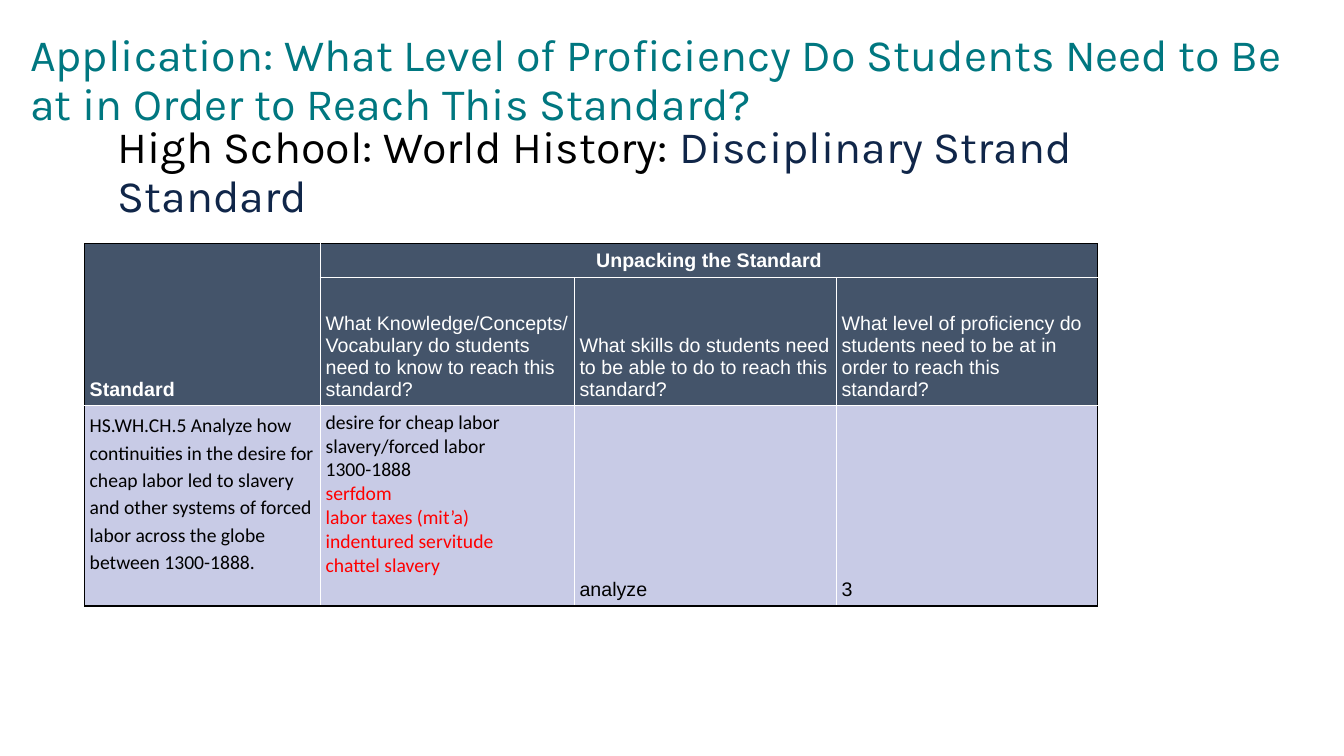
from pptx import Presentation
from pptx.dml.color import RGBColor
from pptx.enum.text import MSO_ANCHOR as Anchor, PP_ALIGN as Align
from pptx.oxml import parse_xml
from pptx.oxml.ns import nsdecls
from pptx.util import Pt

TEAL, NAVY, BLACK, WHITE, RED = "007780", "102649", "000000", "FFFFFF", "FF0000"
SLATE, LAVENDER = "44546A", "C8CBE6"
COL_WIDTHS = [168.5, 181.4, 187.2, 186.5]
ROW_HEIGHTS = [23.8, 91.4, 143.3]

QUESTIONS = [
    "What Knowledge/Concepts/ Vocabulary do students need to know to reach this standard?",
    "What skills do students need to be able to do to reach this standard?",
    "What level of proficiency do students need to be at in order to reach this standard?",
]
STANDARD = ("HS.WH.CH.5 Analyze how continuities in the desire for cheap labor led to "
            "slavery and other systems of forced labor across the globe between 1300-1888.")
GIVEN_CONCEPTS = ["desire for cheap labor", "slavery/forced labor", "1300-1888"]
ADDED_CONCEPTS = ["serfdom", "labor taxes (mit’a)", "indentured servitude", "chattel slavery"]


def rgb(color):
    return RGBColor.from_string(color)


def add_run(p, text, size, font, color, bold=False):
    r = p.add_run()
    r.text = text
    r.font.size, r.font.name, r.font.bold = Pt(size), font, bold
    r.font.color.rgb = rgb(color)


def add_heading(s, box, runs):
    """Place a heading whose runs are (text, color) pairs."""
    tf = s.shapes.add_textbox(*map(Pt, box)).text_frame
    tf.word_wrap = True
    p = tf.paragraphs[0]
    p.line_spacing = 0.9
    for text, color in runs:
        add_run(p, text, 32, "Karla", color)


def fill_cell(cell, lines, fill, font="Arial", bold=False, anchor=Anchor.BOTTOM,
              align=Align.LEFT, spacing=1.0):
    """Write (text, color) lines into a cell, one paragraph each."""
    cell.fill.solid()
    cell.fill.fore_color.rgb = rgb(fill)
    cell.vertical_anchor = anchor
    cell.margin_left = cell.margin_right = cell.margin_top = cell.margin_bottom = Pt(3.6)
    tf = cell.text_frame
    for i, (text, color) in enumerate(lines):
        p = tf.add_paragraph() if i else tf.paragraphs[0]
        p.alignment, p.line_spacing = align, spacing
        add_run(p, text, 14, font, color, bold)


def set_borders(table):
    """Black around the table, white between its cells."""
    last_row, last_col = len(table.rows), len(table.columns)
    for row in range(last_row):
        for col in range(last_col):
            cell = table.cell(row, col)
            if cell.is_spanned:
                continue
            outer = {
                "lnL": col == 0,
                "lnR": col + cell.span_width == last_col,
                "lnT": row == 0,
                "lnB": row + cell.span_height == last_row,
            }
            tc_pr = cell._tc.get_or_add_tcPr()
            for i, (side, on_edge) in enumerate(outer.items()):
                color = BLACK if on_edge else WHITE
                tc_pr.insert(i, parse_xml(
                    f'<a:{side} {nsdecls("a")} w="12700"><a:solidFill>'
                    f'<a:srgbClr val="{color}"/></a:solidFill></a:{side}>'))


def add_standard_table(s, left, top):
    table = s.shapes.add_table(
        len(ROW_HEIGHTS), len(COL_WIDTHS), Pt(left), Pt(top),
        Pt(sum(COL_WIDTHS)), Pt(sum(ROW_HEIGHTS))).table
    table.first_row = table.horz_banding = False
    for column, width in zip(table.columns, COL_WIDTHS):
        column.width = Pt(width)
    for row, height in zip(table.rows, ROW_HEIGHTS):
        row.height = Pt(height)
    table.cell(0, 0).merge(table.cell(1, 0))
    table.cell(0, 1).merge(table.cell(0, 3))

    fill_cell(table.cell(0, 0), [("Standard", WHITE)], SLATE, bold=True)
    fill_cell(table.cell(0, 1), [("Unpacking the Standard", WHITE)], SLATE, bold=True,
              anchor=Anchor.MIDDLE, align=Align.CENTER)
    for col, question in enumerate(QUESTIONS, 1):
        fill_cell(table.cell(1, col), [(question, WHITE)], SLATE)

    concepts = [(t, BLACK) for t in GIVEN_CONCEPTS] + [(t, RED) for t in ADDED_CONCEPTS]
    fill_cell(table.cell(2, 0), [(STANDARD, BLACK)], LAVENDER, "Calibri",
              anchor=Anchor.TOP, spacing=1.15)
    fill_cell(table.cell(2, 1), concepts, LAVENDER, "Calibri", anchor=Anchor.TOP)
    for col, answer in enumerate(["analyze", "3"], 2):
        fill_cell(table.cell(2, col), [(answer, BLACK)], LAVENDER)
    set_borders(table)


def main():
    prs = Presentation()
    prs.slide_width, prs.slide_height = Pt(960), Pt(540)
    s = prs.slides.add_slide(prs.slide_layouts[6])
    add_heading(s, (14.4, 20.2, 928, 103.7), [
        ("Application: What Level of Proficiency Do Students Need to Be at in Order "
         "to Reach This Standard?", TEAL)])
    add_heading(s, (77, 85.7, 723.6, 368.6), [
        ("High School: World History:", BLACK), (" Disciplinary Strand Standard", NAVY)])
    add_standard_table(s, 60.5, 174.2)
    prs.save("out.pptx")


if __name__ == "__main__":
    main()
